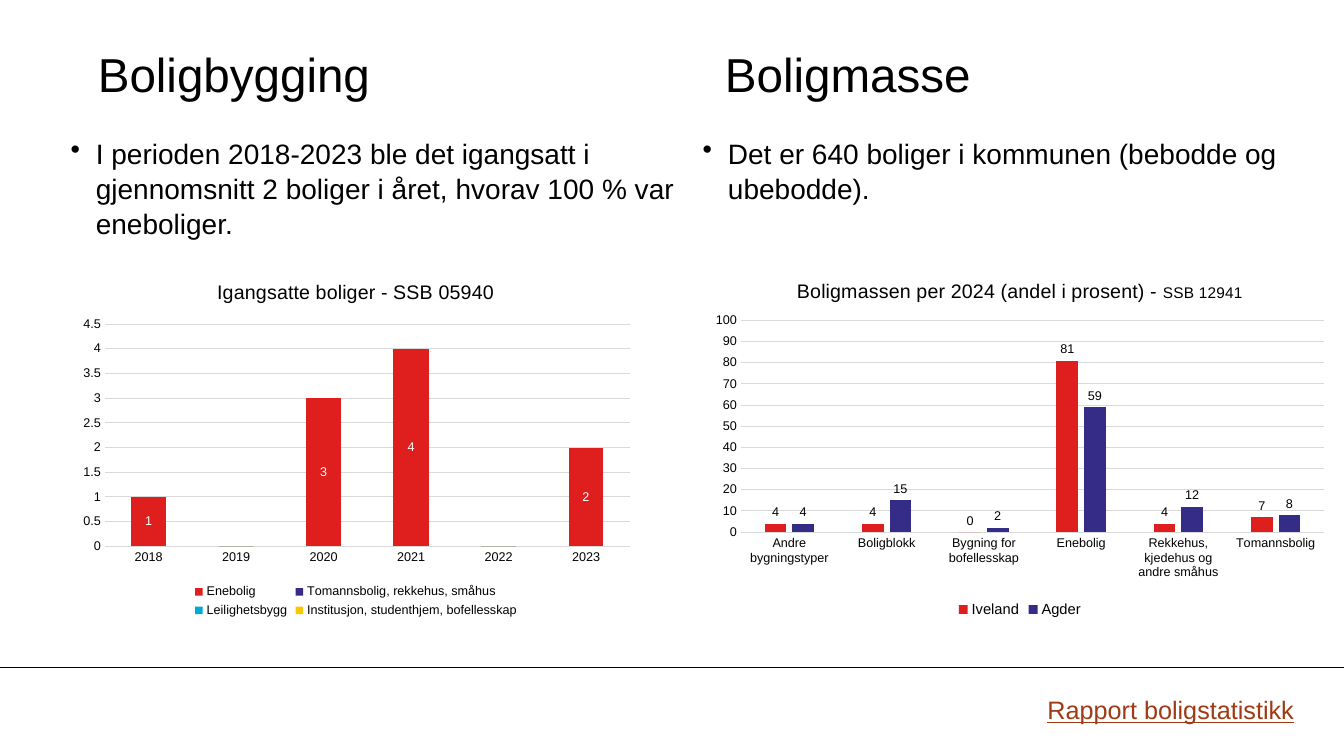
from lxml import etree
from pptx import Presentation
from pptx.chart.data import CategoryChartData
from pptx.dml.color import RGBColor
from pptx.enum.chart import XL_CHART_TYPE, XL_LABEL_POSITION, XL_LEGEND_POSITION, XL_TICK_MARK
from pptx.enum.shapes import MSO_CONNECTOR
from pptx.enum.text import MSO_ANCHOR
from pptx.oxml import parse_xml
from pptx.oxml.ns import nsdecls, qn
from pptx.util import Inches, Pt

STACKED = XL_CHART_TYPE.COLUMN_STACKED
CLUSTERED = XL_CHART_TYPE.COLUMN_CLUSTERED
CENTER = XL_LABEL_POSITION.CENTER
OUTSIDE = XL_LABEL_POSITION.OUTSIDE_END
BOTTOM = XL_LEGEND_POSITION.BOTTOM
NO_TICK = XL_TICK_MARK.NONE
STRAIGHT = MSO_CONNECTOR.STRAIGHT
MIDDLE = MSO_ANCHOR.MIDDLE
TOP = MSO_ANCHOR.TOP

FONT = "Arial"
BLACK, WHITE, GRID, LINK = "000000", "FFFFFF", "D9D9D9", "9F3A14"
COLORS = ["DF1F1D", "342C86", "00A9DA", "FAC800"]


def rgb(code):
    return RGBColor.from_string(code)


def style(font, size, color=BLACK):
    font.name = FONT
    font.size = Pt(size)
    font.bold = False
    font.color.rgb = rgb(color)


def add_text(slide, box, text, size, color=BLACK, anchor=TOP, inset=(0, 0)):
    shape = slide.shapes.add_textbox(*map(Inches, box))
    frame = shape.text_frame
    frame.word_wrap = True
    frame.vertical_anchor = anchor
    frame.margin_left = frame.margin_right = Inches(inset[0])
    frame.margin_top = frame.margin_bottom = Inches(inset[1])
    para = frame.paragraphs[0]
    para.text = text
    style(para.font, size, color)
    return para


def add_title(slide, left, text):
    add_text(slide, (left, 0.35, 4.92, 0.75), text, 34, anchor=MIDDLE)


def add_bullet(slide, box, text):
    para = add_text(slide, box, text, 20)
    para.line_spacing = 1.04
    props = para._p.get_or_add_pPr()
    props.set("marL", str(Inches(0.25)))
    props.set("indent", str(-Inches(0.25)))
    mark = parse_xml(f'<a:buChar {nsdecls("a")} char="•"/>')
    props.insert_element_before(mark, "a:tabLst", "a:defRPr", "a:extLst")


def add_rule(slide, top):
    rule = slide.shapes.add_connector(
        STRAIGHT, 0, Inches(top), Inches(13.33), Inches(top))
    rule.line.color.rgb = rgb(BLACK)
    rule.line.width = Pt(0.75)
    etree.SubElement(rule._element.spPr, qn("a:effectLst"))


def set_plot(chart, area):
    """Place the inner plot area, as shares of the chart."""
    plot = chart._chartSpace.chart.plotArea
    for old in plot.findall(qn("c:layout")):
        plot.remove(old)
    parts = "".join(f'<c:{k} val="{v}"/>' for k, v in zip("xywh", area))
    plot.insert(0, parse_xml(
        f'<c:layout {nsdecls("c")}><c:manualLayout>'
        '<c:layoutTarget val="inner"/><c:xMode val="edge"/>'
        f'<c:yMode val="edge"/>{parts}</c:manualLayout></c:layout>'))


def add_labels(series, color, place, code):
    labels = series.data_labels
    labels.show_value = True
    labels.position = place
    labels.number_format = code
    labels.number_format_is_linked = False
    style(labels.font, 9, color)


def add_chart(slide, kind, left, width, title, cats, rows, area, gap, overlap, key):
    data = CategoryChartData()
    data.categories = cats
    for name, vals in rows:
        data.add_series(name, vals)
    chart = slide.shapes.add_chart(
        kind, Inches(left), Inches(2.61), Inches(width), Inches(3.56), data).chart
    style(chart.font, 10)

    # Title runs
    chart.has_title = True
    para = chart.chart_title.text_frame.paragraphs[0]
    for text, size in title:
        run = para.add_run()
        run.text = text
        style(run.font, size)
    chart.chart_title.include_in_layout = False

    # Legend
    chart.has_legend = True
    chart.legend.position = BOTTOM
    chart.legend.include_in_layout = False
    style(chart.legend.font, key)

    # Axes
    for axis in (chart.category_axis, chart.value_axis):
        axis.major_tick_mark = axis.minor_tick_mark = NO_TICK
        style(axis.tick_labels.font, 9)
    base = chart.category_axis.format.line
    chart.value_axis.format.line.fill.background()
    chart.value_axis.has_major_gridlines = True
    grid = chart.value_axis.major_gridlines.format.line
    for line in (base, grid):
        line.color.rgb = rgb(GRID)
        line.width = Pt(0.75)

    # Columns
    plot = chart.plots[0]
    plot.vary_by_categories = False
    plot.gap_width = gap
    plot.overlap = overlap
    for series, color in zip(plot.series, COLORS):
        series.format.fill.solid()
        series.format.fill.fore_color.rgb = rgb(color)
        series.invert_if_negative = False
    set_plot(chart, area)
    return chart


def main():
    prs = Presentation()
    prs.slide_width, prs.slide_height = Inches(13.33), Inches(7.5)
    slide = prs.slides.add_slide(prs.slide_layouts[6])
    add_rule(slide, 6.62)

    # Headings and key points
    add_title(slide, 0.97, "Boligbygging")
    add_bullet(slide, (0.7, 1.34, 6.02, 1.11),
               "I perioden 2018-2023 ble det igangsatt i gjennomsnitt 2 boliger "
               "i året, hvorav 100 % var eneboliger.")
    add_title(slide, 7.19, "Boligmasse")
    add_bullet(slide, (6.97, 1.34, 5.86, 0.84),
               "Det er 640 boliger i kommunen (bebodde og ubebodde).")

    # Report reference
    link = add_text(slide, (10.29, 6.84, 2.65, 0.4), "Rapport boligstatistikk",
                    18, LINK, inset=(0.1, 0.05))
    link.font.underline = True

    # Housing starts
    years = [str(year) for year in range(2018, 2024)]
    none = [0] * len(years)
    starts = add_chart(
        slide, STACKED, 0.7, 5.66, [("Igangsatte boliger - SSB 05940", 14)], years,
        [("Enebolig", [1, 0, 3, 4, 0, 2]),
         ("Tomannsbolig, rekkehus, småhus", none),
         ("Leilighetsbygg", none),
         ("Institusjon, studenthjem, bofellesskap", none)],
        (0.06, 0.17, 0.92, 0.62), 150, 100, 9)
    add_labels(starts.plots[0].series[0], WHITE, CENTER, "0;;")

    # Housing stock
    stock = add_chart(
        slide, CLUSTERED, 6.97, 6.29,
        [("Boligmassen per 2024 (andel i prosent) - ", 14), ("SSB 12941", 11)],
        ["Andre bygningstyper", "Boligblokk", "Bygning for bofellesskap",
         "Enebolig", "Rekkehus, kjedehus og andre småhus", "Tomannsbolig"],
        [("Iveland", [4, 4, 0, 81, 4, 7]), ("Agder", [4, 15, 2, 59, 12, 8])],
        (0.06, 0.16, 0.92, 0.59), 219, -27, 10.5)
    stock.value_axis.maximum_scale = 100
    for series in stock.plots[0].series:
        add_labels(series, BLACK, OUTSIDE, "0")

    prs.save("out.pptx")


if __name__ == "__main__":
    main()
